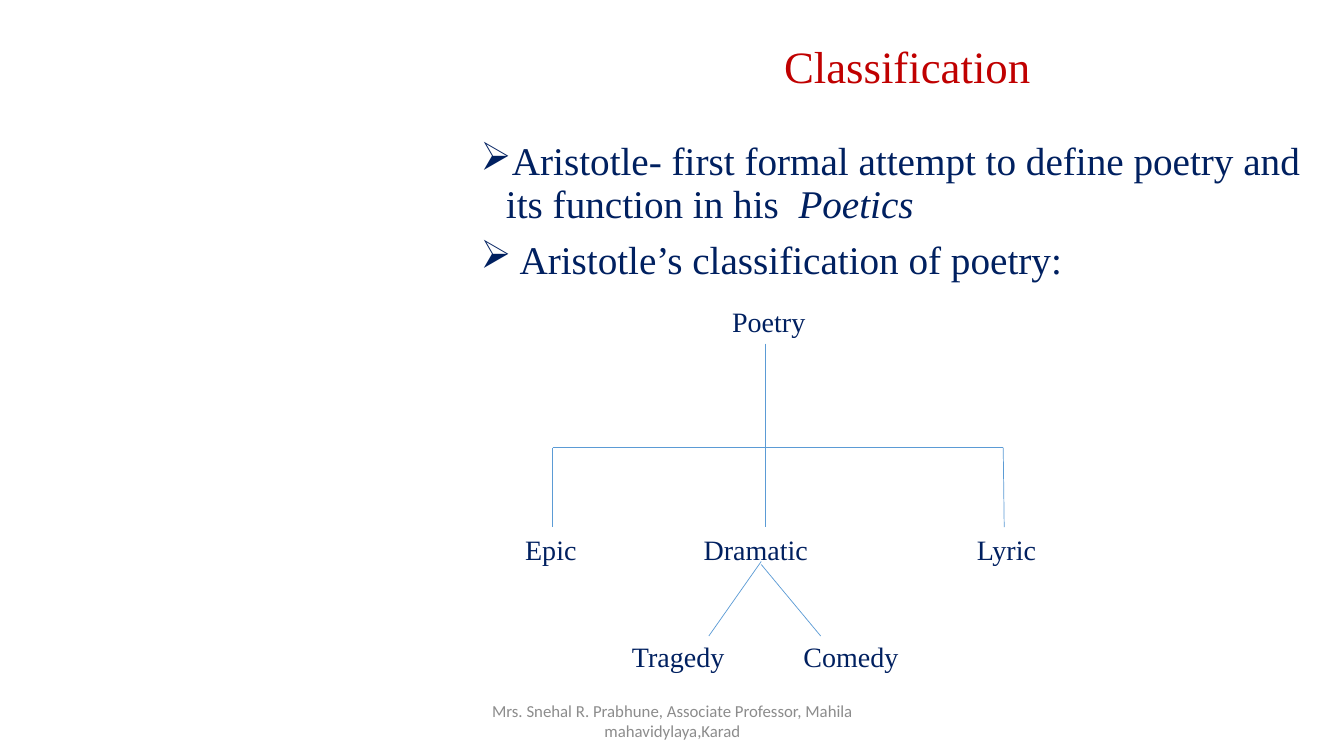
from lxml import etree
from pptx import Presentation
from pptx.dml.color import RGBColor
from pptx.enum import shapes, text
from pptx.oxml import ns
from pptx.util import Inches, Pt

# Content
SERIF, SANS = "Times New Roman", "Calibri"
RED, NAVY, BLUE, GREY = "C00000", "002060", "5B9BD5", "8C8C8C"
HEADING = "Classification"
POINTS = [  # each point is a list of (text, italic)
    [("Aristotle- first formal attempt to define poetry and its function in his  ", False),
     ("Poetics", True)],
    [(" Aristotle’s classification of poetry:", False)],
]
FOOTER = "Mrs. Snehal R. Prabhune, Associate Professor, Mahila mahavidylaya,Karad"

# Layout in inches
COLUMN_LEFT, COLUMN_WIDTH, HEADING_HEIGHT = 4.67, 8.66, 1.36
SLIDE_WIDTH, SLIDE_HEIGHT = 13.33, 7.5
LABEL_HEIGHT = 0.44
ROOT_TOP, BRANCH_Y, GENRE_TOP, DRAMA_TOP = 2.97, 4.44, 5.23, 6.3
EPIC_X, STEM_X, LYRIC_X = 5.48, 7.59, 9.95
LABELS = [  # name, left, top, width, centred
    ("Poetry", 6.24, ROOT_TOP, 2.77, True),
    ("Epic", 5.11, GENRE_TOP, 0.95, False),
    ("Dramatic", 6.88, GENRE_TOP, 1.55, False),
    ("Lyric", 9.59, GENRE_TOP, 0.94, False),
    ("Tragedy", 6.17, DRAMA_TOP, 1.4, False),
    ("Comedy", 7.87, DRAMA_TOP, 1.4, False),
]
BRANCHES = [  # x1, y1, x2, y2
    (STEM_X, ROOT_TOP + LABEL_HEIGHT, STEM_X, BRANCH_Y),
    (EPIC_X, BRANCH_Y, LYRIC_X, BRANCH_Y),
    (EPIC_X, BRANCH_Y, EPIC_X, GENRE_TOP),
    (STEM_X, BRANCH_Y, STEM_X, GENRE_TOP),
    (LYRIC_X, BRANCH_Y, LYRIC_X + 0.01, GENRE_TOP),
    (7.55, 5.6, 8.14, 6.31),
    (7.55, 5.57, 7.03, 6.31),
]


def color(hex_code):
    return RGBColor.from_string(hex_code)


def add_frame(slide, left, top, width, height, middle=False):
    box = slide.shapes.add_textbox(Inches(left), Inches(top), Inches(width), Inches(height))
    frame = box.text_frame
    frame.word_wrap = True
    if middle:
        frame.vertical_anchor = text.MSO_ANCHOR.MIDDLE
    return frame


def add_run(paragraph, words, size, hex_code, font=SERIF, italic=False):
    run = paragraph.add_run()
    run.text = words
    run.font.size, run.font.name, run.font.italic = Pt(size), font, italic
    run.font.color.rgb = color(hex_code)


def add_bullet(paragraph):
    properties = paragraph._p.get_or_add_pPr()
    properties.set("marL", str(Inches(0.25)))
    properties.set("indent", str(-Inches(0.25)))
    etree.SubElement(properties, ns.qn("a:buFont"), typeface="Wingdings")
    etree.SubElement(properties, ns.qn("a:buChar"), char="Ø")


def add_branch(slide, x1, y1, x2, y2):
    branch = slide.shapes.add_connector(
        shapes.MSO_CONNECTOR.STRAIGHT, Inches(x1), Inches(y1), Inches(x2), Inches(y2))
    branch.line.color.rgb = color(BLUE)
    branch.line.width = Pt(0.5)
    etree.SubElement(branch._element.spPr, ns.qn("a:effectLst"))


def main():
    deck = Presentation()
    deck.slide_width, deck.slide_height = Inches(SLIDE_WIDTH), Inches(SLIDE_HEIGHT)
    slide = deck.slides.add_slide(deck.slide_layouts[6])

    # Heading
    heading = add_frame(slide, COLUMN_LEFT, 0, COLUMN_WIDTH, HEADING_HEIGHT, True).paragraphs[0]
    heading.alignment, heading.line_spacing = text.PP_ALIGN.CENTER, 0.9
    add_run(heading, HEADING, 32, RED)

    # Bulleted points
    body = add_frame(slide, COLUMN_LEFT, HEADING_HEIGHT, COLUMN_WIDTH,
                     SLIDE_HEIGHT - HEADING_HEIGHT)
    for index, point in enumerate(POINTS):
        paragraph = body.add_paragraph() if index else body.paragraphs[0]
        paragraph.line_spacing, paragraph.space_before = 0.9, Pt(10)
        add_bullet(paragraph)
        for words, italic in point:
            add_run(paragraph, words, 28, NAVY, italic=italic)

    # Classification tree
    for ends in BRANCHES:
        add_branch(slide, *ends)
    for name, left, top, width, centred in LABELS:
        label = add_frame(slide, left, top, width, LABEL_HEIGHT).paragraphs[0]
        if centred:
            label.alignment = text.PP_ALIGN.CENTER
        add_run(label, name, 20, NAVY)

    # Footer
    footer = add_frame(slide, 4.42, 6.95, 4.5, 0.4, True).paragraphs[0]
    footer.alignment = text.PP_ALIGN.CENTER
    add_run(footer, FOOTER, 12, GREY, SANS)

    deck.save("out.pptx")


if __name__ == "__main__":
    main()
